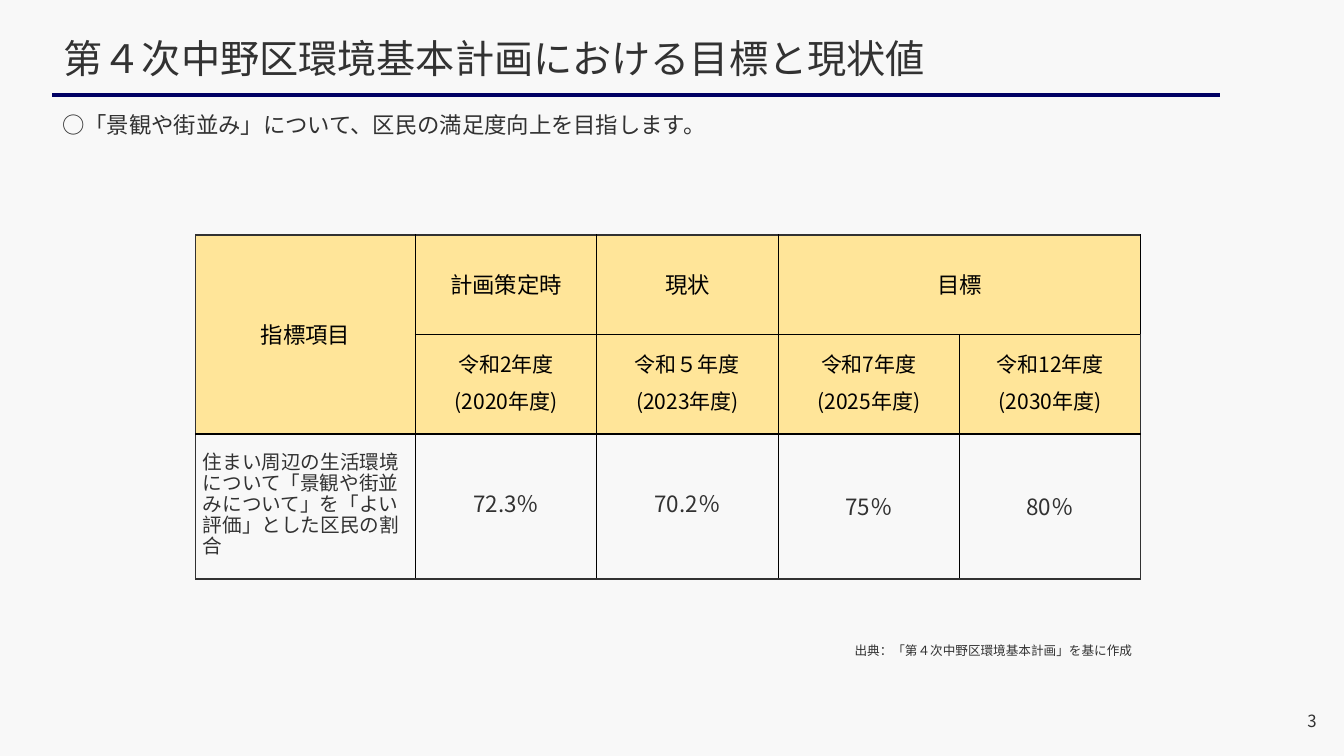
from dataclasses import dataclass

from lxml import etree
from pptx import Presentation
from pptx import util as u
from pptx.dml.color import RGBColor
from pptx.enum import shapes, text
from pptx.oxml import ns


@dataclass(frozen=True)
class Theme:
    font: str = "Noto Sans CJK JP"
    background: str = "F8F8F8"
    body: str = "323232"
    grid: str = "000000"
    rule: str = "000064"
    header: str = "FFE599"
    title_size: int = 28
    text_size: int = 16
    year_size: int = 15
    item_size: int = 14
    number_size: int = 12
    source_size: int = 9


LEFT, CENTER, RIGHT, JUSTIFY = (
    text.PP_ALIGN.LEFT, text.PP_ALIGN.CENTER, text.PP_ALIGN.RIGHT, text.PP_ALIGN.JUSTIFY)


def color(value):
    return RGBColor.from_string(value)


def add_xml(parent, tag, **attributes):
    return etree.SubElement(parent, ns.qn(tag), attributes)


class SlideBuilder:
    def __init__(self, slide, theme):
        self.slide, self.theme = slide, theme
        background = slide.background.fill
        background.solid()
        background.fore_color.rgb = color(theme.background)

    def fill_text(self, frame, lines, size, ink=None, **paragraph_format):
        """Fill a text frame with one styled paragraph per line."""
        for index, line in enumerate(lines):
            paragraph = frame.paragraphs[0] if index == 0 else frame.add_paragraph()
            for name, value in paragraph_format.items():
                setattr(paragraph, name, value)
            run = paragraph.add_run()
            run.text = line
            run.font.size = u.Pt(size)
            run.font.name = self.theme.font
            run.font.color.rgb = color(ink or self.theme.body)
            add_xml(run.font._element, "a:ea", typeface=self.theme.font)

    def title(self, line, box):
        heading = self.slide.shapes.title
        for name, value in zip(("left", "top", "width", "height"), box):
            setattr(heading, name, u.Cm(value))
        frame = heading.text_frame
        frame.auto_size = text.MSO_AUTO_SIZE.NONE
        frame.vertical_anchor = text.MSO_ANCHOR.MIDDLE
        self.fill_text(frame, [line], self.theme.title_size, alignment=JUSTIFY)

    def text(self, line, box, size, anchor=text.MSO_ANCHOR.TOP, hanging=0, **paragraph_format):
        frame = self.slide.shapes.add_textbox(*map(u.Cm, box)).text_frame
        frame.word_wrap = True
        frame.vertical_anchor = anchor
        self.fill_text(frame, [line], size, **paragraph_format)
        if hanging:
            properties = frame.paragraphs[0]._p.get_or_add_pPr()
            properties.set("marL", str(u.Cm(hanging)))
            properties.set("indent", str(-u.Cm(hanging)))

    def rule(self, left, right, y):
        line = self.slide.shapes.add_connector(
            shapes.MSO_CONNECTOR.STRAIGHT, *map(u.Cm, (left, y, right, y)))
        line.line.color.rgb = color(self.theme.rule)
        line.line.width = u.Pt(3)
        add_xml(line._element.spPr, "a:effectLst")

    def borders(self, cell, outer_edges):
        properties = cell._tc.get_or_add_tcPr()
        for edge, is_outer in outer_edges.items():
            line = add_xml(properties, f"a:{edge}", w=str(u.Pt(1)))
            fill = add_xml(line, "a:solidFill")
            add_xml(fill, "a:srgbClr", val=self.theme.body if is_outer else self.theme.grid)

    def cell(self, cell, lines, size, leading, margins, header, alignment=CENTER):
        cell.vertical_anchor = text.MSO_ANCHOR.MIDDLE
        side, end = margins
        for name, value in {"margin_left": side, "margin_right": side,
                            "margin_top": end, "margin_bottom": end}.items():
            setattr(cell, name, u.Cm(value))
        self.fill_text(cell.text_frame, lines, size, self.theme.grid if header else None,
                       alignment=alignment, line_spacing=u.Pt(leading), space_after=u.Pt(8))

    def table(self, box, widths, heights, header_rows, merges, contents):
        """Draw a grid; contents maps (row, column) to keyword values for cell()."""
        grid = self.slide.shapes.add_table(
            len(heights), len(widths), *map(u.Cm, box)).table
        grid.first_row = grid.horz_banding = False
        for column, width in zip(grid.columns, widths):
            column.width = u.Cm(width)
        for row, height in zip(grid.rows, heights):
            row.height = u.Cm(height)
        for r in range(len(heights)):
            for c in range(len(widths)):
                cell = grid.cell(r, c)
                self.borders(cell, {"lnL": c == 0, "lnR": c == len(widths) - 1,
                                    "lnT": r == 0, "lnB": r == len(heights) - 1})
                if r < header_rows:
                    cell.fill.solid()
                    cell.fill.fore_color.rgb = color(self.theme.header)
                else:
                    cell.fill.background()
        for first, last in merges:
            grid.cell(*first).merge(grid.cell(*last))
        for (r, c), content in contents.items():
            self.cell(grid.cell(r, c), header=r < header_rows, **content)


def indicator_contents(theme):
    wide, narrow, tight = (0.3, 0.15), (0.25, 0), (0.18, 0)
    item = "住まい周辺の生活環境について「景観や街並みについて」を「よい評価」とした区民の割合"
    headings = [("指標項目", wide), ("計画策定時", narrow), ("現状", narrow), ("目標", wide)]
    years = [("令和2年度", "(2020年度)"), ("令和５年度", "(2023年度)"),
             ("令和7年度", "(2025年度)"), ("令和12年度", "(2030年度)")]
    rates = [("72.3％", 18), ("70.2％", 18), ("75％", 22), ("80％", 22)]

    contents = {(2, 0): dict(lines=[item], size=theme.item_size, leading=15,
                             margins=tight, alignment=LEFT)}
    for c, (heading, margins) in enumerate(headings):
        contents[0, c] = dict(lines=[heading], size=theme.text_size, leading=22, margins=margins)
    for c, (year, (rate, leading)) in enumerate(zip(years, rates), start=1):
        contents[1, c] = dict(lines=year, size=theme.year_size, leading=18, margins=narrow)
        contents[2, c] = dict(lines=[rate], size=theme.text_size, leading=leading, margins=tight)
    return contents


def main():
    theme = Theme()
    deck = Presentation()
    deck.slide_width, deck.slide_height = u.Cm(33.87), u.Cm(19.05)
    title_only = deck.slide_layouts[5]
    page = SlideBuilder(deck.slides.add_slide(title_only), theme)

    page.rule(1.32, 30.74, 2.4)
    page.text("3", (25.53, 17.65, 7.9, 1.02), theme.number_size,
              anchor=text.MSO_ANCHOR.MIDDLE, alignment=RIGHT)
    page.title("第４次中野区環境基本計画における目標と現状値", (1.35, 0.53, 27.38, 1.83))
    page.text("○「景観や街並み」について、区民の満足度向上を目指します。",
              (1.32, 2.67, 29.41, 0.94), theme.text_size,
              hanging=0.74, space_before=u.Pt(2))
    page.table((4.93, 5.92, 23.82, 8.67), [5.54] + [4.57] * 4, [2.51, 2.51, 3.65],
               header_rows=2, merges=[((0, 0), (1, 0)), ((0, 3), (0, 4))],
               contents=indicator_contents(theme))
    page.text("出典：「第４次中野区環境基本計画」を基に作成",
              (17.09, 16.08, 11.68, 0.64), theme.source_size, alignment=RIGHT)

    deck.save("out.pptx")


if __name__ == "__main__":
    main()
